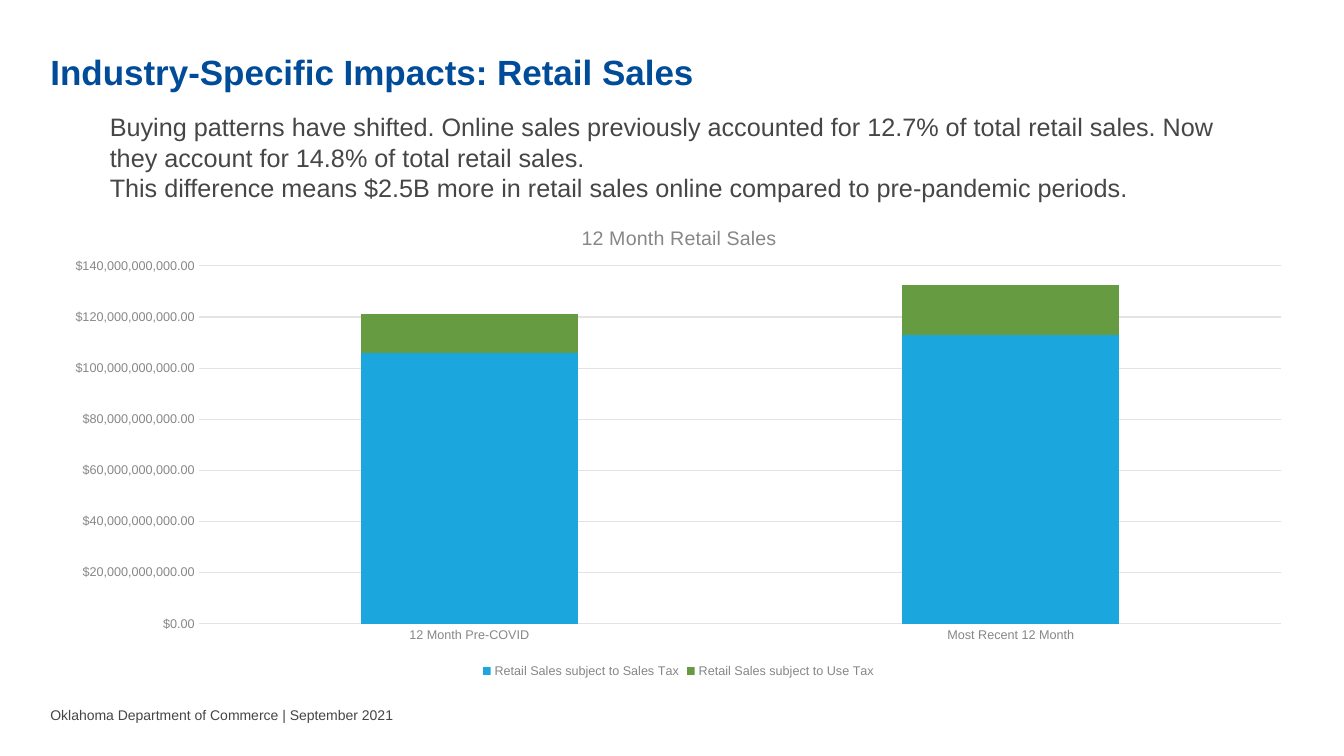
from dataclasses import dataclass

from lxml import etree
from pptx import Presentation
from pptx.chart.data import CategoryChartData
from pptx.dml.color import RGBColor
from pptx.enum.chart import XL_CHART_TYPE, XL_LEGEND_POSITION, XL_TICK_MARK
from pptx.enum.text import MSO_ANCHOR, MSO_AUTO_SIZE
from pptx.oxml.ns import qn
from pptx.util import Inches, Pt

STACKED = XL_CHART_TYPE.COLUMN_STACKED
BOTTOM = XL_LEGEND_POSITION.BOTTOM
NO_TICK = XL_TICK_MARK.NONE
TOP, MIDDLE = MSO_ANCHOR.TOP, MSO_ANCHOR.MIDDLE
NO_FIT, GROW = MSO_AUTO_SIZE.NONE, MSO_AUTO_SIZE.SHAPE_TO_FIT_TEXT


@dataclass(frozen=True)
class Theme:
    """Colours, font and type sizes of the slide."""
    font: str = "Arial"
    title: str = "004C99"
    body: str = "464646"
    muted: str = "878787"
    rule: str = "E3E3E3"
    series: tuple = ("1CA6DE", "669B41")
    title_size: int = 25
    body_size: int = 18
    chart_title_size: int = 14
    small_size: int = 10
    label_size: int = 9


def style_font(font, name, size, color, bold=False):
    """Set the typeface, size, colour and weight of a font."""
    font.name, font.size, font.bold = name, Pt(size), bold
    font.color.rgb = RGBColor.from_string(color)


def write(tf, text, **fmt):
    """Write each line of text as a formatted paragraph."""
    for i, line in enumerate(text.split("\n")):
        p = tf.add_paragraph() if i else tf.paragraphs[0]
        r = p.add_run()
        r.text = line
        style_font(r.font, **fmt)


def place(element, x, y, **rest):
    """Give a chart part a manual layout in shares of the chart."""
    layout = element.find(qn("c:layout"))
    if layout is None:
        layout = etree.Element(qn("c:layout"))
        tx = element.find(qn("c:tx"))
        if tx is None:
            element.insert(0, layout)
        else:
            tx.addnext(layout)
    for child in list(layout):
        layout.remove(child)
    manual = etree.SubElement(layout, qn("c:manualLayout"))
    values = {"xMode": "edge", "yMode": "edge", "x": x, "y": y, **rest}
    if rest:
        values = {"layoutTarget": "inner", **values}
    for tag, value in values.items():
        etree.SubElement(manual, qn(f"c:{tag}")).set("val", str(value))


class SlideBuilder:
    """Add styled elements to one slide, placed by percent of its size."""

    def __init__(self, prs, theme):
        """Start a blank slide."""
        self.prs, self.theme = prs, theme
        self.s = prs.slides.add_slide(prs.slide_layouts[6])

    def box(self, x, y, w, h):
        """Turn percentages into slide lengths."""
        sw, sh = self.prs.slide_width, self.prs.slide_height
        return [int(share * side / 100)
                for share, side in zip((x, y, w, h), (sw, sh, sw, sh))]

    def text(self, text, at, size, color, bold=False, anchor=TOP,
             fit=NO_FIT, inset=0.1):
        """Add a wrapping text box."""
        sp = self.s.shapes.add_textbox(*self.box(*at))
        tf = sp.text_frame
        tf.word_wrap, tf.auto_size = True, fit
        tf.vertical_anchor, tf.margin_left = anchor, Inches(inset)
        write(tf, text, name=self.theme.font, size=size, color=color, bold=bold)

    def axis(self, axis):
        """Style the labels of a chart axis."""
        t = self.theme
        axis.major_tick_mark = axis.minor_tick_mark = NO_TICK
        style_font(axis.tick_labels.font, t.font, t.label_size, t.muted)

    def rule(self, line):
        """Draw a thin pale chart line."""
        line.color.rgb = RGBColor.from_string(self.theme.rule)
        line.width = Pt(0.75)

    def stacked_columns(self, title, cats, series, at):
        """Add a stacked column chart with title and legend."""
        t = self.theme
        data = CategoryChartData(number_format='"$"#,##0.00')
        data.categories = cats
        for name, values in series.items():
            data.add_series(name, values)
        chart = self.s.shapes.add_chart(STACKED, *self.box(*at), data).chart
        style_font(chart.font, t.font, t.small_size, t.body)

        chart.has_title = True
        write(chart.chart_title.text_frame, title, name=t.font,
              size=t.chart_title_size, color=t.muted)
        chart.chart_title.include_in_layout = False
        chart_part = chart.element.chart
        place(chart_part.find(qn("c:title")), 0.42, 0.04)
        place(chart_part.plotArea, 0.118, 0.132, w=0.862, h=0.746)

        plot = chart.plots[0]
        plot.gap_width, plot.overlap = 150, 100
        plot.vary_by_categories = False
        for ser, color in zip(plot.series, t.series):
            ser.format.fill.solid()
            ser.format.fill.fore_color.rgb = RGBColor.from_string(color)

        cat_axis, val_axis = chart.category_axis, chart.value_axis
        self.axis(cat_axis)
        self.axis(val_axis)
        self.rule(cat_axis.format.line)
        self.rule(val_axis.major_gridlines.format.line)
        val_axis.format.line.fill.background()
        val_axis.minimum_scale, val_axis.maximum_scale = 0, 140e9
        val_axis.major_unit = 20e9
        val_axis.tick_labels.number_format = '"$"#,##0.00'
        val_axis.tick_labels.number_format_is_linked = False

        chart.has_legend = True
        chart.legend.position = BOTTOM
        chart.legend.include_in_layout = False
        style_font(chart.legend.font, t.font, t.label_size, t.muted)


def main():
    """Build and save the retail sales slide."""
    prs = Presentation()
    prs.slide_width, prs.slide_height = Inches(13.33), Inches(7.5)
    t = Theme()
    slide = SlideBuilder(prs, t)
    left, width = 3.75, 93.47
    slide.text("Industry-Specific Impacts: Retail Sales",
               (left, 6, width, 12.27), t.title_size, t.title,
               bold=True, inset=0)
    slide.text("Buying patterns have shifted. Online sales previously accounted "
               "for 12.7% of total retail sales. Now they account for 14.8% of "
               "total retail sales.\n"
               "This difference means $2.5B more in retail sales online compared "
               "to pre-pandemic periods.",
               (7.43, 14.13, 86.65, 13.47), t.body_size, t.body, fit=GROW)
    slide.stacked_columns(
        "12 Month Retail Sales",
        ["12 Month Pre-COVID", "Most Recent 12 Month"],
        {"Retail Sales subject to Sales Tax": (105.8e9, 112.8e9),
         "Retail Sales subject to Use Tax": (15.5e9, 19.6e9)},
        (left, 26.8, width, 63.47))
    slide.text("Oklahoma Department of Commerce | September 2021",
               (left, 93.07, 69.39, 2.93), t.small_size, t.body,
               anchor=MIDDLE, inset=0)
    prs.save("out.pptx")


if __name__ == "__main__":
    main()
